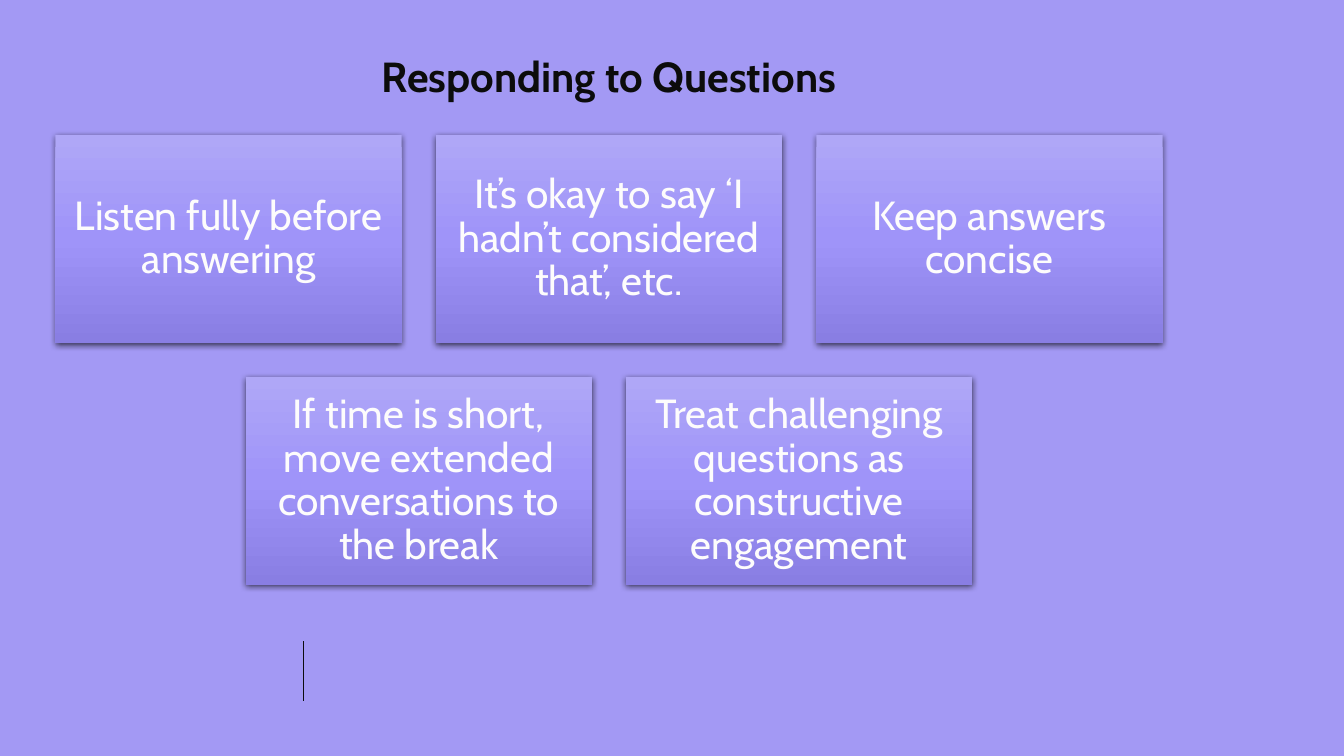
from copy import deepcopy
from dataclasses import dataclass
from lxml.etree import SubElement
from pptx import Presentation
from pptx.dml.color import RGBColor
from pptx.enum.shapes import MSO_CONNECTOR, MSO_SHAPE
from pptx.enum.text import MSO_ANCHOR, PP_ALIGN
from pptx.oxml.ns import qn
from pptx.util import Inches, Pt


@dataclass(frozen=True)
class Theme:
    back: str = "A399F4"
    ink: str = "0C0C0C"
    light: str = "FDFCFC"
    shade: str = "000000"
    fade: tuple = ("AFA7F7", "9F94F9", "897EE3")
    font: str = "Cabin"
    head: int = 30
    body: int = 29


@dataclass(frozen=True)
class Box:
    left: float
    top: float
    width: float
    height: float

    def place(self):
        return [Inches(n) for n in (self.left, self.top, self.width, self.height)]


THEME = Theme()
WIDE, HIGH = 13.33, 7.5
GAP = 0.34
COLS = 3
TIPS = [
    "Listen fully before answering",
    "It’s okay to say ‘I hadn’t considered that’, etc.",
    "Keep answers concise",
    "If time is short, move extended conversations to the break",
    "Treat challenging questions as constructive engagement",
]


def tint(code):
    return RGBColor.from_string(code)


def write(shape, text, size, color, inset, lead, bold=False):
    frame = shape.text_frame
    frame.text = text
    frame.word_wrap = True
    frame.vertical_anchor = MSO_ANCHOR.MIDDLE
    frame.margin_left = frame.margin_right = Inches(inset)
    frame.margin_top = frame.margin_bottom = Inches(inset)
    para = frame.paragraphs[0]
    para.alignment = PP_ALIGN.CENTER
    para.line_spacing = lead
    font = para.runs[0].font
    font.name, font.size, font.bold = THEME.font, Pt(size), bold
    font.color.rgb = tint(color)


def blend(shape):
    shape.fill.gradient()
    shape.fill.gradient_angle = 270
    stops = shape._element.spPr.find(qn("a:gradFill")).find(qn("a:gsLst"))
    stops.insert(1, deepcopy(stops[0]))
    for i, (stop, code) in enumerate(zip(shape.fill.gradient_stops, THEME.fade)):
        stop.position = i / 2
        stop.color.rgb = tint(code)


def shadow(shape):
    shape.shadow.inherit = False
    effect = shape._element.spPr.find(qn("a:effectLst"))
    outer = SubElement(effect, qn("a:outerShdw"), blurRad=str(Pt(4.5)),
                       dist=str(Pt(1.5)), dir="5400000", algn="ctr", rotWithShape="0")
    color = SubElement(outer, qn("a:srgbClr"), val=THEME.shade)
    SubElement(color, qn("a:alpha"), val="63000")


def card(slide, box, text):
    shape = slide.shapes.add_shape(MSO_SHAPE.RECTANGLE, *box.place())
    shape.line.fill.background()
    blend(shape)
    shadow(shape)
    write(shape, text, THEME.body, THEME.light, 0.12, 0.9)


def cards(slide, box, tips):
    rows = [tips[i:i + COLS] for i in range(0, len(tips), COLS)]
    width = (box.width - GAP * (COLS - 1)) / COLS
    height = (box.height - GAP * (len(rows) - 1)) / len(rows)
    for r, row in enumerate(rows):
        indent = (COLS - len(row)) * (width + GAP) / 2
        for c, tip in enumerate(row):
            left = box.left + indent + c * (width + GAP)
            top = box.top + r * (height + GAP)
            card(slide, Box(left, top, width, height), tip)


def title(slide, box, text):
    shape = slide.shapes.title
    shape.left, shape.top, shape.width, shape.height = box.place()
    write(shape, text, THEME.head, THEME.ink, 0, 0.8, True)


def rule(slide, box):
    left, top, width, height = box.place()
    line = slide.shapes.add_connector(
        MSO_CONNECTOR.STRAIGHT, left, top, left + width, top + height)
    line.line.color.rgb = tint(THEME.ink)
    line.line.width = Pt(1)
    SubElement(line._element.spPr, qn("a:effectLst"))


def main():
    deck = Presentation()
    deck.slide_width, deck.slide_height = Inches(WIDE), Inches(HIGH)
    slide = deck.slides.add_slide(deck.slide_layouts[5])
    slide.background.fill.solid()
    slide.background.fill.fore_color.rgb = tint(THEME.back)
    rule(slide, Box(3.01, 6.36, 0, 0.59))
    title(slide, Box(0.55, 0.59, 10.98, 0.42), "Responding to Questions")
    cards(slide, Box(0.55, 1.34, 10.98, 4.46), TIPS)
    deck.save("out.pptx")


if __name__ == "__main__":
    main()
